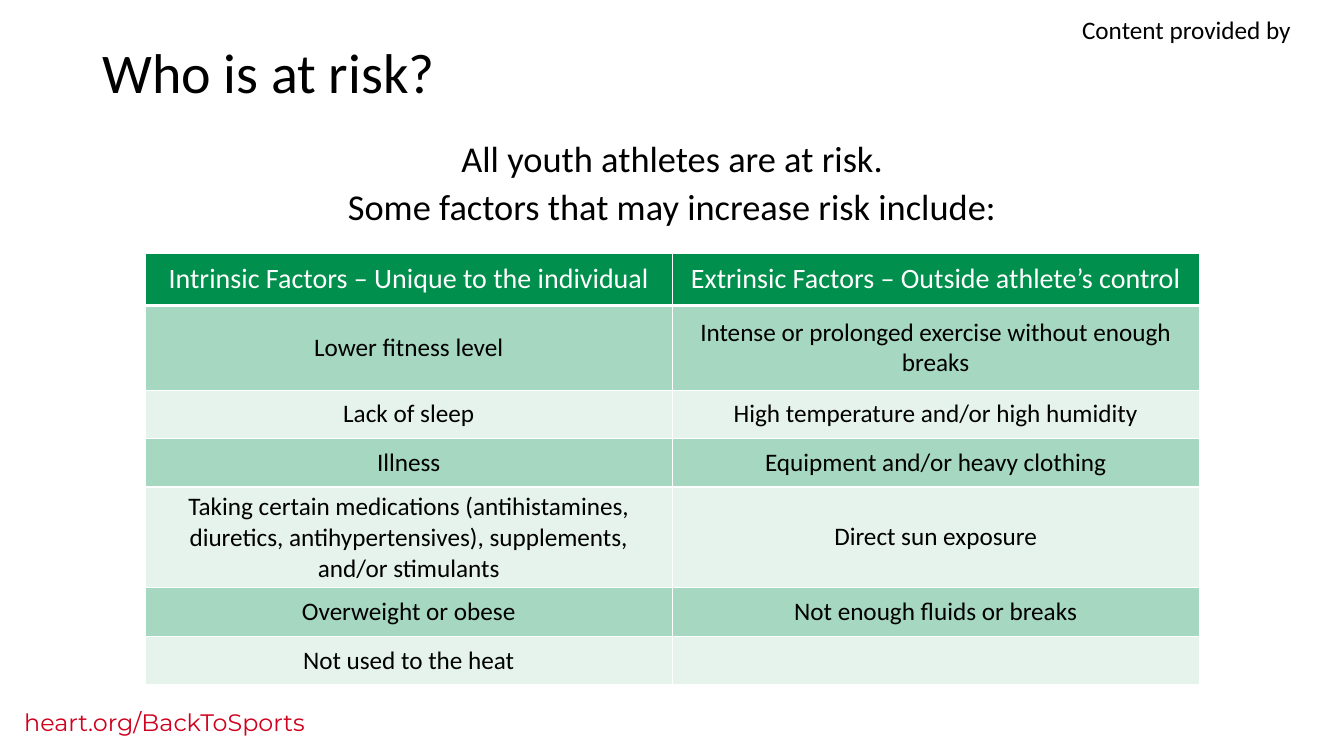
from lxml.etree import SubElement
from pptx import Presentation
from pptx.dml.color import RGBColor
from pptx.enum.text import MSO_ANCHOR as ANCHOR, PP_ALIGN as ALIGN
from pptx.oxml.ns import qn
from pptx.util import Cm, Pt

BLACK = RGBColor(0x00, 0x00, 0x00)
WHITE = RGBColor(0xFF, 0xFF, 0xFF)
GREEN = RGBColor(0x00, 0x8F, 0x4C)
RED = RGBColor(0xD0, 0x01, 0x1E)

FACTORS = [
    ("Intrinsic Factors – Unique to the individual",
     "Extrinsic Factors – Outside athlete’s control"),
    ("Lower fitness level",
     "Intense or prolonged exercise without enough breaks"),
    ("Lack of sleep", "High temperature and/or high humidity"),
    ("Illness", "Equipment and/or heavy clothing"),
    ("Taking certain medications (antihistamines, diuretics, "
     "antihypertensives), supplements, and/or stimulants",
     "Direct sun exposure"),
    ("Overweight or obese", "Not enough fluids or breaks"),
    ("Not used to the heat", ""),
]
ROW_HEIGHTS = [1.32, 2.13, 1.22, 1.22, 2.13, 1.22, 1.22]
COLUMN_WIDTH = 13.28


def write(tf, text, size=18, color=BLACK, font="Calibri", align=ALIGN.CENTER,
          spacing=None, before=0):
    tf.word_wrap = True
    for i, line in enumerate(text.split("\n")):
        p = tf.add_paragraph() if i else tf.paragraphs[0]
        p.alignment = align
        p.line_spacing = spacing
        if i:
            p.space_before = Pt(before)
        r = p.add_run()
        r.text = line
        r.font.size = Pt(size)
        r.font.name = font
        r.font.color.rgb = color


def add_text(s, text, left, top, width, height, **fmt):
    sp = s.shapes.add_textbox(Cm(left), Cm(top), Cm(width), Cm(height))
    write(sp.text_frame, text, **fmt)


def set_borders(cell, bottom):
    tcPr = cell._tc.get_or_add_tcPr()
    for i, (side, width) in enumerate(
            [("lnL", 1), ("lnR", 1), ("lnT", 1), ("lnB", bottom)]):
        ln = SubElement(tcPr, qn(f"a:{side}"), w=str(Pt(width)))
        tcPr.insert(i, ln)
        fill = SubElement(ln, qn("a:solidFill"))
        SubElement(fill, qn("a:srgbClr"), val=str(WHITE))


def fill_cell(cell, opacity):
    cell.fill.solid()
    cell.fill.fore_color.rgb = GREEN
    if opacity < 100:
        clr = cell._tc.tcPr.find(".//" + qn("a:srgbClr"))
        SubElement(clr, qn("a:alpha"), val=str(opacity * 1000))


def add_factor_table(s, left, top):
    table = s.shapes.add_table(
        len(FACTORS), 2, Cm(left), Cm(top),
        Cm(2 * COLUMN_WIDTH), Cm(sum(ROW_HEIGHTS))).table
    for column in table.columns:
        column.width = Cm(COLUMN_WIDTH)
    for i, (texts, height) in enumerate(zip(FACTORS, ROW_HEIGHTS)):
        table.rows[i].height = Cm(height)
        header = i == 0
        opacity = 100 if header else 35 if i % 2 else 10
        for j, text in enumerate(texts):
            cell = table.cell(i, j)
            cell.vertical_anchor = ANCHOR.MIDDLE
            fill_cell(cell, opacity)
            set_borders(cell, 3 if header else 1)
            if text:
                write(cell.text_frame, text, size=20 if header else 18,
                      color=WHITE if header else BLACK)


def main():
    prs = Presentation()
    prs.slide_width, prs.slide_height = Cm(33.87), Cm(19.05)
    s = prs.slides.add_slide(prs.slide_layouts[6])
    add_text(s, "heart.org/BackToSports", 0.36, 17.7, 11, 0.99,
             size=17, color=RED, font="Montserrat", align=ALIGN.LEFT)
    add_text(s, "Content provided by", 26.37, 0.23, 7.06, 1.02)
    add_text(s, "Who is at risk?", 2.34, 1.02, 24.03, 2.11,
             size=40, align=ALIGN.LEFT, spacing=0.9)
    add_text(s, "All youth athletes are at risk.\n"
             "Some factors that may increase risk include:",
             2.29, 3.43, 29.31, 2.29, size=26, spacing=0.9, before=6)
    add_factor_table(s, 3.66, 6.38)
    prs.save("out.pptx")


if __name__ == "__main__":
    main()
